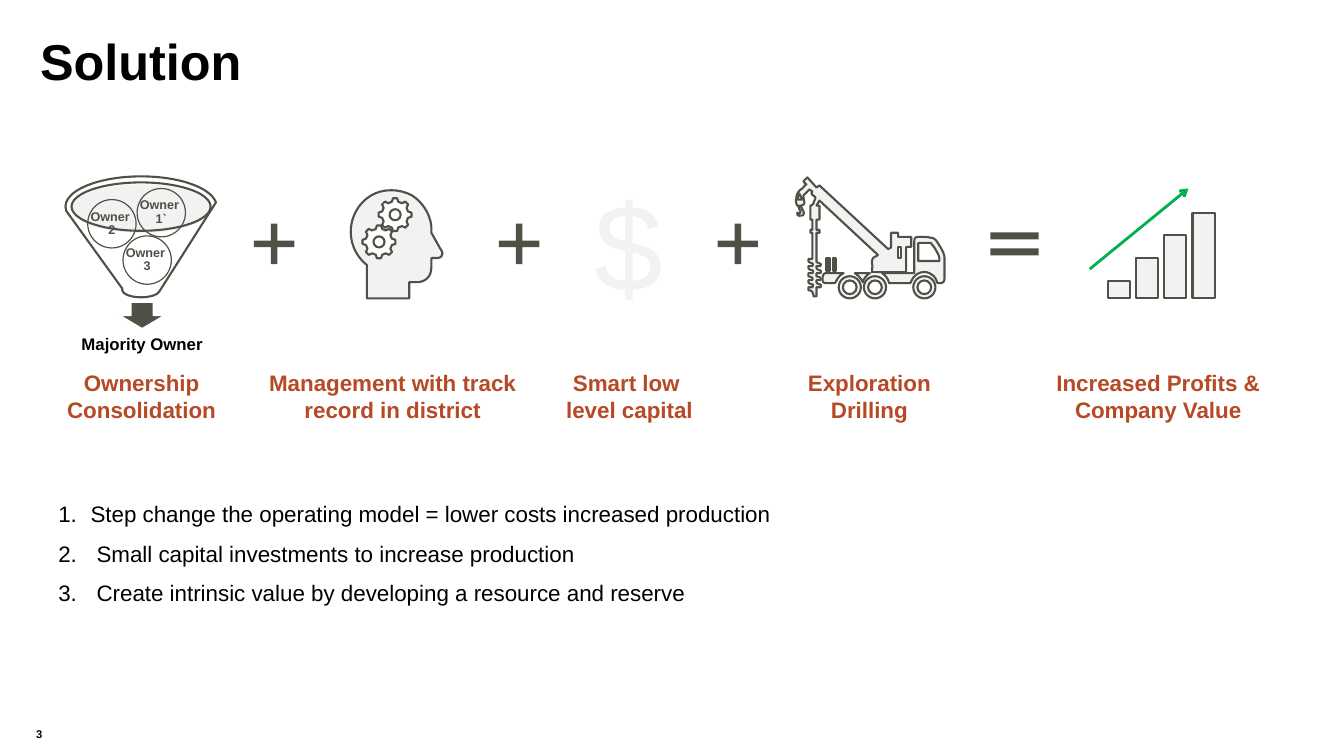
from dataclasses import dataclass
from math import cos, radians, sin
from typing import NamedTuple, Optional

from lxml import etree
from pptx import Presentation, util as u
from pptx.dml.color import RGBColor
from pptx.enum import shapes as kinds, text as setting
from pptx.oxml.ns import qn
from pptx.shapes.autoshape import Shape
from pptx.slide import Slide

CELL = u.Inches(0.1)
COLUMNS, ROWS = 133.33, 75
FONT = "Arial"
INK, BLACK, PALE, WHITE, RUST, GREEN = "505046", "000000", "F2F2F2", "FFFFFF", "B64926", "00B050"
KIND = kinds.MSO_SHAPE
CENTER = setting.PP_ALIGN.CENTER
Point = tuple[float, float]


class Area(NamedTuple):
    col: float
    row: float
    cols: float
    rows: float


@dataclass(frozen=True)
class TextStyle:
    size: float
    color: str = BLACK
    bold: bool = True
    align: setting.PP_ALIGN = setting.PP_ALIGN.LEFT
    spacing: float = 1.0
    insets: Area = Area(1, 0.5, 1, 0.5)
    anchor: setting.MSO_ANCHOR = setting.MSO_ANCHOR.TOP
    wrap: bool = True


@dataclass(frozen=True)
class Part:
    kind: kinds.MSO_SHAPE
    area: Area
    fill: Optional[str] = None
    line: Optional[str] = INK
    weight: float = 1.5
    adjustments: tuple[float, ...] = ()


NO_INSETS = Area(0, 0, 0, 0)
MIDDLE = setting.MSO_ANCHOR.MIDDLE
LABEL = TextStyle(16, RUST, align=CENTER)
OWNER = TextStyle(9, INK, align=CENTER, spacing=0.9, insets=NO_INSETS, anchor=MIDDLE, wrap=False)
MAJORITY = TextStyle(12, align=CENTER, spacing=0.9, insets=Area(0.9, 0.9, 0.9, 0.9), anchor=MIDDLE)
POINT = TextStyle(16, bold=False)

LABELS = [
    ("Ownership Consolidation", 1.9, 24.3),
    ("Management with track record in district", 24.2, 29.5),
    ("Smart low \vlevel capital", 53.1, 18.7),
    ("Exploration Drilling", 76.9, 18.7),
    ("Increased Profits & Company Value", 103.2, 23.4),
]
OWNERS = [("Owner \v3", 12.2, 23.4), ("Owner \v2", 8.7, 19.8), ("Owner \v1`", 13.6, 18.7)]
STEPS = [
    ("Step change the operating model = lower costs increased production", 3.2),
    ("Small capital investments to increase production", 3.8),
    ("Create intrinsic value by developing a resource and reserve", 3.8),
]
GEAR_CENTERS = [(392, 213), (376, 240)]
HEAD = """M 437 247 L 428 231 L 428 230 C 429 216 421 202 409 194 C 396 187 380 187 368 194
C 355 202 348 216 348 230 C 348 243 354 255 364 263 L 364 296 L 406 296 L 406 280 L 413 280
C 417 280 421 279 424 276 C 427 273 428 269 428 264 L 428 256 L 434 256 C 438 256 441 252 437 247"""
DRILL_LEFT = """M 802 271 L 806 271 C 807 270 807 268 805 268 C 802 267 802 267 802 264 L 806 264
C 807 262 806 261 805 261 C 802 260 802 260 802 257 L 806 257 L 806 231 L 804 231 L 804 228 L 806 228
L 806 218 L 804 218 L 804 204"""
JIB = """C 805 204 806 203 807 202 C 807 200 809 198 809 196
C 809 195 806 194 805 192 L 806 190 L 803 188 L 797 194 C 797 197 798 199 798 201
C 798 203 796 204 794 204 C 793 204 791 204 791 204 C 790 202 789 199 790 197
C 790 193 792 189 796 187 C 797 186 798 184 800 183 C 799 182 798 181 797 180 L 801 176 L 810 186"""
BOOM = """L 813 184 L 881 247 C 884 246 884 246 884 243 L 884 231 L 891 231 L 891 235 L 904 235 L 904 245
L 899 245 L 899 270 L 865 270 C 865 267 866 264 865 261 C 865 257 866 255 870 254
C 870 253 870 253 871 253 L 813 199 C 812 201 811 202 810 204"""
DRILL_RIGHT = """L 813 204 L 813 218 L 810 218
L 810 228 L 813 228 L 813 231 L 810 231 L 810 260 C 812 261 813 261 814 262
C 815 262 814 263 814 264 L 810 264 C 810 267 810 267 813 268 C 815 269 815 269 814 271 L 810 271
L 810 274 C 811 275 815 274 814 278 L 810 278 C 810 281 810 281 813 282 C 814 282 815 283 814 285
L 810 285 L 810 294 L 807 294"""
DRILL_TIP = """C 807 291 806 288 802 288 L 802 285 L 806 285
C 807 283 807 282 805 282 C 802 281 802 281 802 278 L 806 278 C 807 274 803 275 802 274"""
CRANE_GAPS = "M 894 256 L 894 245 L 891 245 L 891 256 M 796 198 L 793 192 L 791 198"
CRANE = " ".join([DRILL_LEFT, JIB, BOOM, DRILL_RIGHT, DRILL_TIP, CRANE_GAPS])
CAB = """M 875 271 L 907 271 L 907 240 C 907 236 908 235 912 235 C 916 235 920 235 924 236
C 926 236 927 237 929 239 C 931 242 933 245 935 249 C 936 251 937 254 937 256 L 937 276
C 937 279 936 281 932 281 L 930 281 C 929 278 928 275 925 273 C 918 267 908 270 904 279
C 904 280 903 281 902 281 L 882 281 C 881 276 878 273 875 271
M 911 241 L 911 259 L 932 259 C 932 257 932 255 931 253 C 929 249 927 245 924 242
C 924 241 923 241 923 241 L 911 241"""
REAR_GUARD = """M 837 271 C 833 273 831 276 829 280 C 829 280 828 281 828 281 L 820 281
C 817 281 816 280 816 277 C 816 273 817 271 820 271 L 837 271"""
MIDDLE_GUARD = "M 863 271 C 860 273 857 276 856 280 C 854 276 851 273 848 271"
HOOK = """M 792 205 L 795 205 C 795 206 796 207 796 208 C 797 209 798 211 797 213
C 796 214 795 214 793 214 C 792 214 792 214 791 213 C 791 213 791 212 791 211
C 792 211 792 212 792 212 C 793 212 794 211 794 211 C 794 210 794 210 794 209
C 793 208 793 207 792 205"""


def cells(count: float) -> u.Length:
    return u.Emu(round(count * CELL))


def rgb(color: str) -> RGBColor:
    return RGBColor.from_string(color)


def write(shape: Shape, words: str, style: TextStyle) -> None:
    frame = shape.text_frame
    frame.word_wrap = style.wrap
    frame.vertical_anchor = style.anchor
    frame.margin_left, frame.margin_top, frame.margin_right, frame.margin_bottom = map(cells, style.insets)
    frame.text = words
    paragraph = frame.paragraphs[0]
    paragraph.alignment = style.align
    paragraph.line_spacing = style.spacing
    for run in paragraph.runs:
        run.font.name, run.font.size, run.font.bold = FONT, u.Pt(style.size), style.bold
        run.font.color.rgb = rgb(style.color)


def add_words(slide: Slide, words: str, area: Area, style: TextStyle) -> Shape:
    box = slide.shapes.add_textbox(*map(cells, area))
    write(box, words, style)
    return box


def paint(shape: Shape, fill: Optional[str], line: Optional[str], weight: float = 1.5) -> None:
    shape.shadow.inherit = False
    for target, color in ((shape.fill, fill), (shape.line.fill, line)):
        if color:
            target.solid()
            target.fore_color.rgb = rgb(color)
        else:
            target.background()
    if line:
        shape.line.width = u.Pt(weight)


def add_part(slide: Slide, part: Part) -> Shape:
    shape = slide.shapes.add_shape(part.kind, *map(cells, part.area))
    for index, value in enumerate(part.adjustments):
        shape.adjustments[index] = value
    paint(shape, part.fill, part.line, part.weight)
    return shape


def curve(start: Point, bends: list[Point], pieces: int = 8) -> list[Point]:
    corners = [start, *bends]
    points = []
    for step in range(1, pieces + 1):
        t = step / pieces
        weights = ((1 - t) ** 3, 3 * t * (1 - t) ** 2, 3 * t * t * (1 - t), t ** 3)
        points.append(tuple(sum(w * p[axis] for w, p in zip(weights, corners)) for axis in (0, 1)))
    return points


def trace(outline: str) -> list[list[Point]]:
    contours: list[list[Point]] = []
    tokens = iter(outline.split())
    for command in tokens:
        pairs = [(float(next(tokens)), float(next(tokens))) for _ in range(3 if command == "C" else 1)]
        if command == "M":
            contours.append(pairs)
        else:
            contours[-1].extend(curve(contours[-1][-1], pairs) if command == "C" else pairs)
    return contours


def gear(center: Point, teeth: int = 8) -> list[Point]:
    tooth = ((-14, 13.2), (-7, 16.4), (7, 16.4), (14, 13.2))
    return [
        (center[0] + radius * cos(radians(360 / teeth * index + turn)),
         center[1] + radius * sin(radians(360 / teeth * index + turn)))
        for index in range(teeth) for turn, radius in tooth
    ]


def add_outline(slide: Slide, contours: list[list[Point]]) -> None:
    scaled = [[(cells(x / 10), cells(y / 10)) for x, y in contour] for contour in contours]
    builder = slide.shapes.build_freeform(*scaled[0][0], scale=1.0)
    for index, contour in enumerate(scaled):
        if index:
            builder.move_to(*contour[0])
        builder.add_line_segments(contour[1:], close=True)
    paint(builder.convert_to_shape(), PALE, INK)


def add_growth_arrow(slide: Slide) -> None:
    arrow = slide.shapes.add_connector(
        kinds.MSO_CONNECTOR.STRAIGHT, cells(108.1), cells(26.7), cells(117.9), cells(18.7))
    arrow.line.color.rgb = rgb(GREEN)
    arrow.line.width = u.Pt(2)
    properties = arrow.element.spPr
    etree.SubElement(properties.find(qn("a:ln")), qn("a:tailEnd"), type="arrow")
    etree.SubElement(properties, qn("a:effectLst"))


def add_step(slide: Slide, number: int, words: str, indent: float) -> None:
    box = add_words(slide, words, Area(4.8, 49.1 + 3.95 * (number - 1), 82.4, 3.7), POINT)
    paragraph = box.text_frame.paragraphs[0]
    paragraph.space_after = u.Pt(6)
    properties = paragraph._p.get_or_add_pPr()
    properties.set("marL", str(cells(indent)))
    properties.set("indent", str(-cells(indent)))
    etree.SubElement(properties, qn("a:buFont"), typeface="+mj-lt")
    etree.SubElement(properties, qn("a:buAutoNum"), type="arabicPeriod", startAt=str(number))


def main() -> None:
    deck = Presentation()
    deck.slide_width, deck.slide_height = cells(COLUMNS), cells(ROWS)
    slide = deck.slides.add_slide(deck.slide_layouts[6])

    add_words(slide, "Solution", Area(3, 2.5, 127.4, 6), TextStyle(36, insets=Area(1, 0.5, 1.6, 0)))
    add_part(slide, Part(KIND.OVAL, Area(7.1, 18.3, 13.8, 4.8), PALE, None))
    add_part(slide, Part(KIND.DOWN_ARROW, Area(11.9, 30, 4.4, 2.6), INK, WHITE, 0.85))
    add_words(slide, "Majority Owner", Area(5.5, 32.1, 17.2, 4.3), MAJORITY)
    for words, col, row in OWNERS:
        write(add_part(slide, Part(KIND.OVAL, Area(col, row, 4.8, 4.8), weight=0.85)), words, OWNER)
    add_part(slide, Part(KIND.FUNNEL, Area(6.5, 17.5, 15, 12)))
    for words, col, cols in LABELS:
        add_words(slide, words, Area(col, 36.1, cols, 6.4), LABEL)
    for col in (25.2, 49.5, 71.2):
        add_part(slide, Part(KIND.CROSS, Area(col, 22.2, 4, 4), INK, None, adjustments=(0.42,)))
    add_part(slide, Part(KIND.MATH_EQUAL, Area(97.4, 21.7, 6.5, 5), INK, None, adjustments=(0.14, 0.18)))

    add_outline(slide, [gear(center) for center in GEAR_CENTERS] + trace(HEAD))
    for x, y in GEAR_CENTERS:
        add_part(slide, Part(KIND.OVAL, Area(x / 10 - 0.55, y / 10 - 0.55, 1.1, 1.1), WHITE))
    dollar = add_words(slide, "$", Area(57.2, 16.7, 10.3, 12.1),
                       TextStyle(88, PALE, False, CENTER, insets=NO_INSETS))
    dollar.text_frame.paragraphs[0].space_after = u.Pt(6)

    for outline in (CRANE, CAB, REAR_GUARD, MIDDLE_GUARD, HOOK):
        add_outline(slide, trace(outline))
    for col in (83.2, 85.7, 90.6):
        add_part(slide, Part(KIND.DONUT, Area(col, 27.4, 2.2, 2.2), PALE, adjustments=(0.19,)))
    for col in (82, 82.6):
        add_part(slide, Part(KIND.RECTANGLE, Area(col, 25.6, 0.3, 1.3), PALE))
    for index in range(4):
        height = 1.75 + 2.25 * index
        add_part(slide, Part(KIND.RECTANGLE, Area(109.9 + 2.8 * index, 29.6 - height, 2.2, height), PALE))
    add_growth_arrow(slide)

    for number, (words, indent) in enumerate(STEPS, 1):
        add_step(slide, number, words, indent)
    add_words(slide, "3", Area(1.2, 71.6, 3.6, 2.5),
              TextStyle(8, align=setting.PP_ALIGN.RIGHT, insets=Area(0.6, 0.6, 0.6, 0.6)))
    deck.save("out.pptx")


if __name__ == "__main__":
    main()
